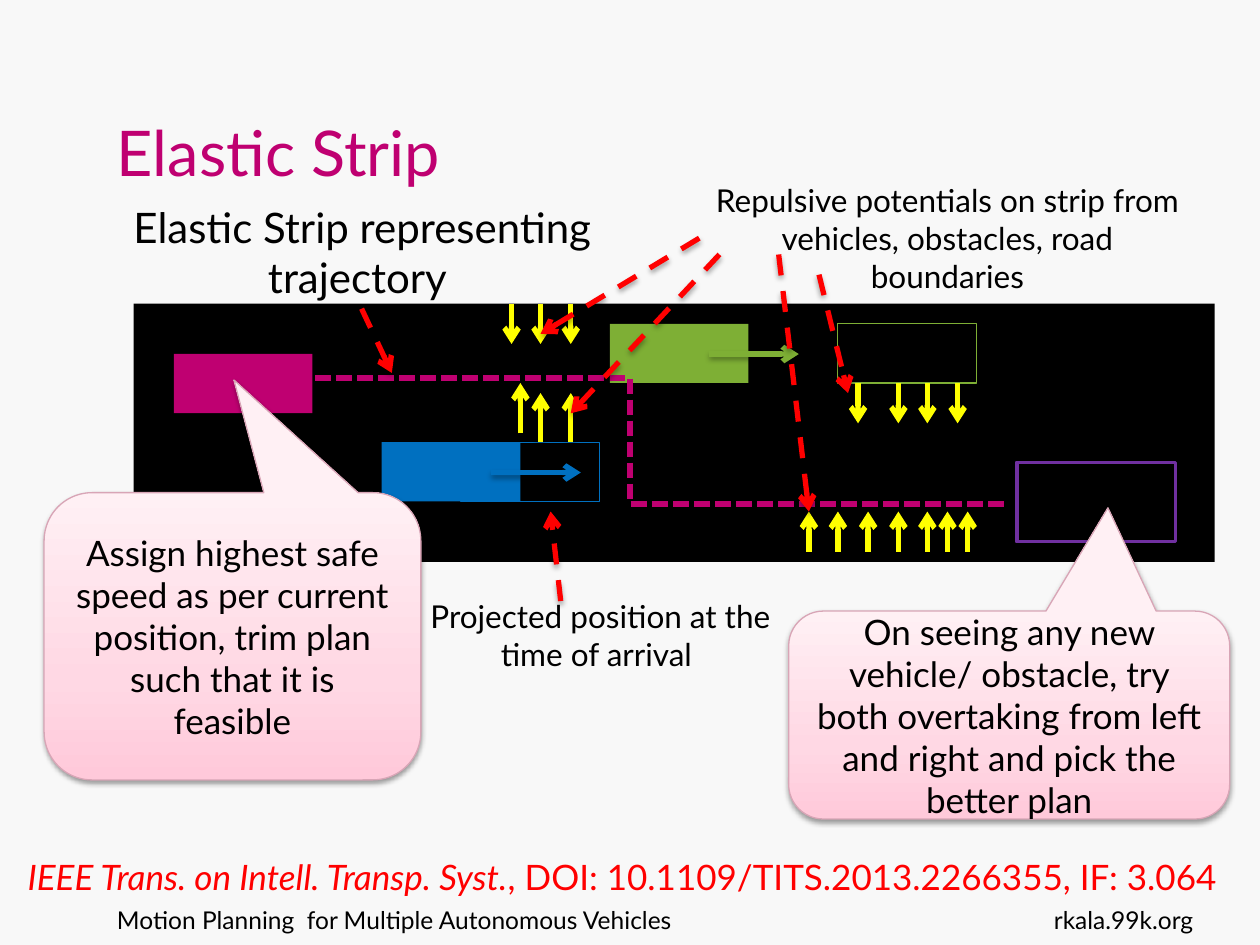
import copy

import pptx
import pptx.dml.color
import pptx.enum.dml
import pptx.enum.shapes
import pptx.enum.text
import pptx.oxml
import pptx.oxml.ns
import pptx.util

Inches = pptx.util.Inches
Pt = pptx.util.Pt
RGBColor = pptx.dml.color.RGBColor
Dash = pptx.enum.dml.MSO_LINE
Shape = pptx.enum.shapes.MSO_SHAPE
Align = pptx.enum.text.PP_ALIGN
Anchor = pptx.enum.text.MSO_ANCHOR

FONT = "Lato"
BACKGROUND = RGBColor(0xF8, 0xF8, 0xF8)
BLACK = RGBColor(0, 0, 0)
MAGENTA = RGBColor(0xBF, 0x00, 0x71)
BLUE = RGBColor(0x00, 0x70, 0xC0)
GREEN = RGBColor(0x7E, 0xAF, 0x35)
PURPLE = RGBColor(0x70, 0x30, 0xA0)
RED = RGBColor(0xFF, 0, 0)
YELLOW = RGBColor(0xFF, 0xFF, 0)
CALLOUT_EDGE = RGBColor(0xD8, 0xA5, 0xB6)
CALLOUT_STOPS = [
    (0, RGBColor(0xFF, 0xC9, 0xDA)),
    (0.35, RGBColor(0xFF, 0xD8, 0xE4)),
    (1, RGBColor(0xFF, 0xF0, 0xF4)),
]
VEHICLE_SIZE = (1.1, 0.47)


def write_text(shape, text, size, color=BLACK, align=Align.LEFT,
               anchor=Anchor.TOP, wrap=True, italic_lead=""):
    """Fill a shape with one paragraph, opening with an optional italic run."""
    frame = shape.text_frame
    frame.word_wrap = wrap
    frame.vertical_anchor = anchor
    paragraph = frame.paragraphs[0]
    paragraph.alignment = align
    for words, italic in ((italic_lead, True), (text, False)):
        if words:
            run = paragraph.add_run()
            run.text = words
            run.font.name = FONT
            run.font.size = Pt(size)
            run.font.italic = italic
            run.font.color.rgb = color


def add_label(slide, box, text, size, **text_format):
    label = slide.shapes.add_textbox(*map(Inches, box))
    write_text(label, text, size, **text_format)


def add_shadow(shape, opacity, distance):
    """Drop a soft black shadow straight down; opacity is in percent."""
    shape._element.spPr.append(pptx.oxml.parse_xml(
        f'<a:effectLst {pptx.oxml.ns.nsdecls("a")}>'
        f'<a:outerShdw blurRad="{Pt(3.1)}" dist="{Pt(distance)}" dir="5400000" '
        f'rotWithShape="0"><a:srgbClr val="000000">'
        f'<a:alpha val="{opacity * 1000}"/></a:srgbClr></a:outerShdw></a:effectLst>'))


def add_block(slide, box, fill=None, edge=None, edge_width=0.75):
    block = slide.shapes.add_shape(Shape.RECTANGLE, *map(Inches, box))
    block.shadow.inherit = False
    if fill is None:
        block.fill.background()
    else:
        block.fill.solid()
        block.fill.fore_color.rgb = fill
    if edge is None:
        block.line.fill.background()
    else:
        block.line.color.rgb = edge
        block.line.width = Pt(edge_width)


def add_arrow(slide, start, end, color, dash=None):
    arrow = slide.shapes.add_connector(
        pptx.enum.shapes.MSO_CONNECTOR.STRAIGHT, *map(Inches, (*start, *end)))
    arrow.line.color.rgb = color
    arrow.line.width = Pt(3)
    if dash is not None:
        arrow.line.dash_style = dash
    arrow.line._get_or_add_ln().append(pptx.oxml.parse_xml(
        f'<a:tailEnd {pptx.oxml.ns.nsdecls("a")} type="arrow"/>'))
    add_shadow(arrow, 35, 1.8)


def add_potentials(slide, columns, start_y, end_y):
    """Draw a row of vertical repulsion arrows."""
    for x in columns:
        add_arrow(slide, (x, start_y), (x, end_y), YELLOW)


def add_pointers(slide, pointers):
    for start, end in pointers:
        add_arrow(slide, start, end, RED, Dash.DASH)


def bezier_points(start, curves, steps=16):
    """Sample a chain of cubic curves, each given as two controls and an end."""
    points = [start]
    for first, second, end in curves:
        corners = (points[-1], first, second, end)
        for step in range(1, steps + 1):
            t = step / steps
            weights = ((1 - t) ** 3, 3 * t * (1 - t) ** 2, 3 * t * t * (1 - t), t ** 3)
            points.append(tuple(sum(w * corner[axis] for w, corner in zip(weights, corners))
                                for axis in (0, 1)))
    return points


def add_trajectory(slide):
    points = bezier_points((2.45, 3.02), [
        ((3.04, 3.03), (3.63, 3.04), (4.06, 3.1)),
        ((4.49, 3.15), (4.74, 3.22), (5.04, 3.35)),
        ((5.35, 3.48), (5.39, 3.79), (5.87, 3.89)),
        ((6.34, 3.99), (7.12, 3.96), (7.9, 3.93)),
    ])
    builder = slide.shapes.build_freeform(*points[0], scale=Inches(1))
    builder.add_line_segments(points[1:], close=False)
    strip = builder.convert_to_shape()
    strip.shadow.inherit = False
    strip.fill.background()
    strip.line.color.rgb = MAGENTA
    strip.line.width = Pt(3)
    strip.line.dash_style = Dash.SQUARE_DOT


def add_callout(slide, box, tip, text):
    """Add a pink speech bubble; tip is its offset from the centre, in box sizes."""
    callout = slide.shapes.add_shape(Shape.ROUNDED_RECTANGULAR_CALLOUT, *map(Inches, box))
    for index, value in enumerate((*tip, 0.167)):
        callout.adjustments[index] = value
    callout.fill.gradient()
    callout.fill.gradient_angle = 90
    stop_list = callout._element.spPr.find(".//" + pptx.oxml.ns.qn("a:gsLst"))
    stop_list.append(copy.deepcopy(stop_list[0]))
    for stop, (position, color) in zip(callout.fill.gradient_stops, CALLOUT_STOPS):
        stop.position = position
        stop.color.rgb = color
    callout.line.color.rgb = CALLOUT_EDGE
    callout.line.width = Pt(0.75)
    add_shadow(callout, 38, 1.6)
    write_text(callout, text, 20, align=Align.CENTER, anchor=Anchor.MIDDLE)


def add_road_scene(slide):
    add_block(slide, (1.06, 2.41, 8.58, 2.05), fill=BLACK)
    for x, y, color in ((1.38, 2.81, MAGENTA), (3.03, 3.51, BLUE), (4.84, 2.57, GREEN)):
        add_block(slide, (x, y, *VEHICLE_SIZE), fill=color)
    for x, y, color in ((3.9, 3.75, BLUE), (5.63, 2.81, GREEN)):
        add_arrow(slide, (x, y), (x + 0.71, y), color)
    for x, y, color in ((3.66, 3.51, BLUE), (6.65, 2.57, GREEN)):
        add_block(slide, (x, y, *VEHICLE_SIZE), edge=color)
    add_trajectory(slide)
    add_potentials(slide, (4.13,), 3.44, 3.04)
    add_potentials(slide, (4.29, 4.53), 3.51, 3.12)
    add_potentials(slide, (4.06, 4.29, 4.53), 2.41, 2.73)
    add_potentials(slide, (6.81, 7.13, 7.36, 7.6), 3.04, 3.36)
    add_potentials(slide, (6.42, 6.65, 6.89, 7.13, 7.36, 7.52, 7.68), 4.38, 4.06)
    add_block(slide, (8.07, 3.67, 1.26, 0.63), edge=PURPLE, edge_width=2)


def add_annotations(slide):
    add_label(slide, (3.27, 4.69, 2.99, 0.71),
              "Projected position at the time of arrival ", 18, align=Align.CENTER)
    add_label(slide, (0.83, 1.55, 4.09, 0.91),
              "Elastic Strip representing trajectory ", 24, align=Align.CENTER)
    add_label(slide, (5.55, 1.39, 3.94, 1.01),
              "Repulsive potentials on strip from vehicles, obstacles, road boundaries",
              18, align=Align.CENTER)
    add_pointers(slide, [((4.45, 4.77), (4.37, 4.06)), ((2.87, 2.45), (3.11, 2.96)),
                         ((5.55, 1.89), (4.29, 2.65)), ((5.71, 2.02), (4.53, 3.28))])
    add_callout(slide, (6.26, 4.85, 3.5, 1.65), (0.224, -0.997),
                "On seeing any new vehicle/ obstacle, try both overtaking from left "
                "and right and pick the better plan")
    add_callout(slide, (0.35, 3.91, 2.99, 2.28), (0.004, -0.892),
                "Assign highest safe speed as per current position, trim plan "
                "such that it is feasible")
    add_pointers(slide, [((6.18, 2.02), (6.42, 4.06)), ((6.5, 2.18), (6.73, 3.12))])


def main():
    deck = pptx.Presentation()
    deck.slide_width, deck.slide_height = Inches(10), Inches(7.5)
    slide = deck.slides.add_slide(deck.slide_layouts[6])
    slide.background.fill.solid()
    slide.background.fill.fore_color.rgb = BACKGROUND

    add_label(slide, (0.83, 7.13, 6.93, 0.52),
              "Motion Planning  for Multiple Autonomous Vehicles", 14)
    add_label(slide, (0.83, 0.3, 6.77, 1.25), "Elastic Strip", 36,
              color=MAGENTA, anchor=Anchor.BOTTOM, wrap=False)
    add_road_scene(slide)
    add_annotations(slide)
    add_label(slide, (8.07, 7.13, 1.5, 0.52), "rkala.99k.org", 14, align=Align.RIGHT)
    add_label(slide, (0.12, 6.74, 9.69, 0.44),
              ", DOI: 10.1109/TITS.2013.2266355, IF: 3.064", 20, color=RED,
              italic_lead="IEEE Trans. on Intell. Transp. Syst.")
    deck.save("out.pptx")


if __name__ == "__main__":
    main()
